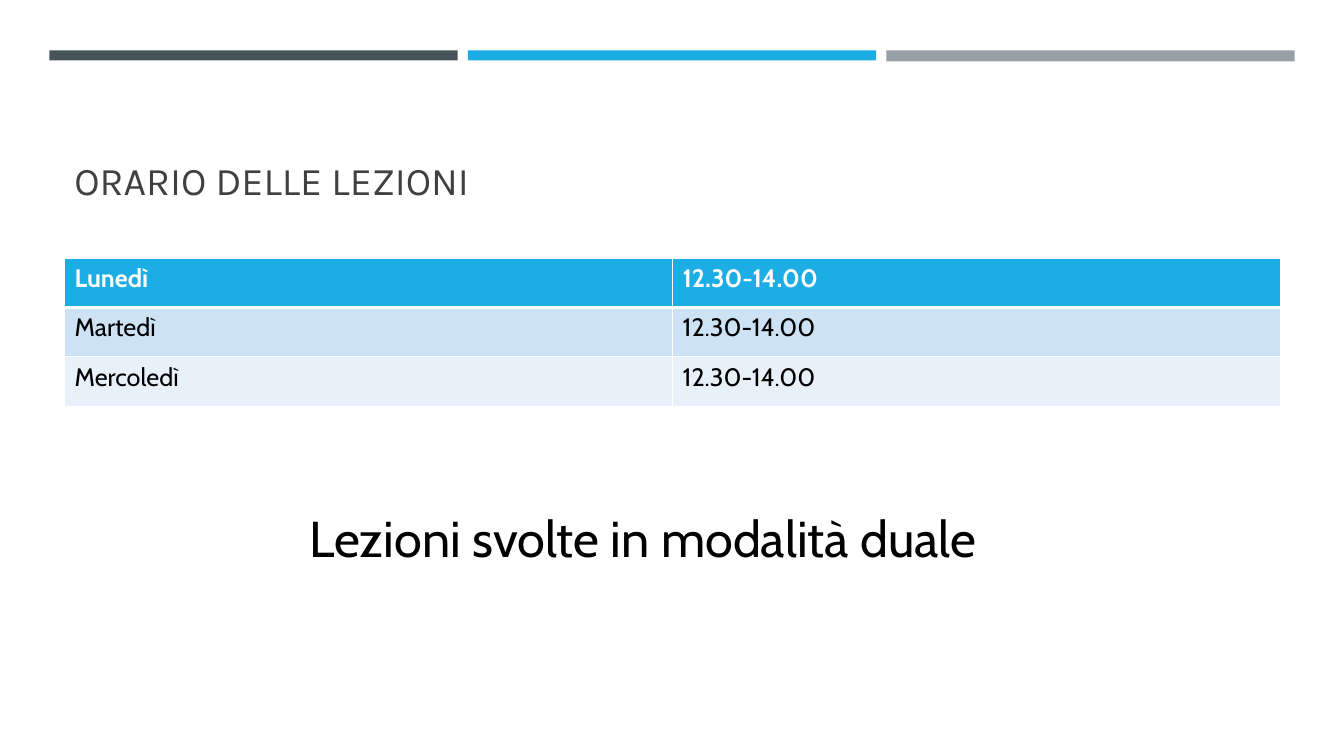
import pptx
import pptx.dml.color
import pptx.enum.shapes
import pptx.enum.text
import pptx.oxml
import pptx.oxml.ns
import pptx.util

PX = 9144  # 100 px to the inch
WHITE, BLACK, BLUE = "FFFFFF", "000000", "1CADE4"
BARS = [("465359", 10), (BLUE, 10), ("969FA7", 11)]
TIMETABLE = [
    ("Lunedì", "12.30-14.00"),
    ("Martedì", "12.30-14.00"),
    ("Mercoledì", "12.30-14.00"),
]
ROW_FILLS = [BLUE, "CDE3F5", "E8F1FA"]


def px(*lengths):
    return [pptx.util.Emu(length * PX) for length in lengths]


def rgb(color):
    return pptx.dml.color.RGBColor.from_string(color)


def write(tf, text, color, **fmt):
    r = tf.paragraphs[0].add_run()
    r.text = text
    r.font.color.rgb = rgb(color)
    for name, value in fmt.items():
        setattr(r.font, name, value)


def add_bars(slide, x, y, width, gap):
    for i, (color, height) in enumerate(BARS):
        sp = slide.shapes.add_shape(
            pptx.enum.shapes.MSO_SHAPE.RECTANGLE,
            *px(x + i * (width + gap), y, width, height))
        sp.shadow.inherit = False
        sp.fill.solid()
        sp.fill.fore_color.rgb = rgb(color)
        sp.line.fill.background()


def add_text(slide, box, text, color, anchor, **fmt):
    tf = slide.shapes.add_textbox(*px(*box)).text_frame
    tf.word_wrap = True
    tf.vertical_anchor = anchor
    write(tf, text, color, **fmt)


def set_borders(cell, widths):
    """Draw white cell edges; widths maps L, R, T, B to points."""
    tcPr = cell._tc.get_or_add_tcPr()
    for i, (side, width) in enumerate(widths.items()):
        tcPr.insert(i, pptx.oxml.parse_xml(
            f'<a:ln{side} {pptx.oxml.ns.nsdecls("a")} w="{pptx.util.Pt(width)}">'
            f'<a:solidFill><a:srgbClr val="{WHITE}"/></a:solidFill></a:ln{side}>'))


def add_timetable(slide, x, y, width, height):
    rows, cols = len(TIMETABLE), len(TIMETABLE[0])
    table = slide.shapes.add_table(rows, cols, *px(x, y, width, height)).table
    for i, (entries, fill) in enumerate(zip(TIMETABLE, ROW_FILLS)):
        header = i == 0
        for j, text in enumerate(entries):
            cell = table.cell(i, j)
            cell.fill.solid()
            cell.fill.fore_color.rgb = rgb(fill)
            write(cell.text_frame, text, WHITE if header else BLACK,
                  name="Cabin", size=pptx.util.Pt(18), bold=header)
            set_borders(cell, {"L": 1, "R": 1, "T": 3 if i == 1 else 1,
                               "B": 3 if header else 1})


def build_timetable_slide(prs):
    slide = prs.slides.add_slide(prs.slide_layouts[6])
    anchors = pptx.enum.text.MSO_ANCHOR
    add_bars(slide, 49, 50, 405, 10)
    add_text(slide, (64, 77, 1206, 130), "ORARIO DELLE LEZIONI", "404040",
             anchors.BOTTOM, name="Karla", size=pptx.util.Pt(28))
    add_timetable(slide, 64, 256, 1206, 147)
    add_text(slide, (297, 498, 825, 71), "Lezioni svolte in modalità duale", BLACK,
             anchors.TOP, name="Cabin", size=pptx.util.Pt(36))


def main():
    prs = pptx.Presentation()
    prs.slide_width, prs.slide_height = px(1333, 750)
    build_timetable_slide(prs)
    prs.save("out.pptx")


if __name__ == "__main__":
    main()
